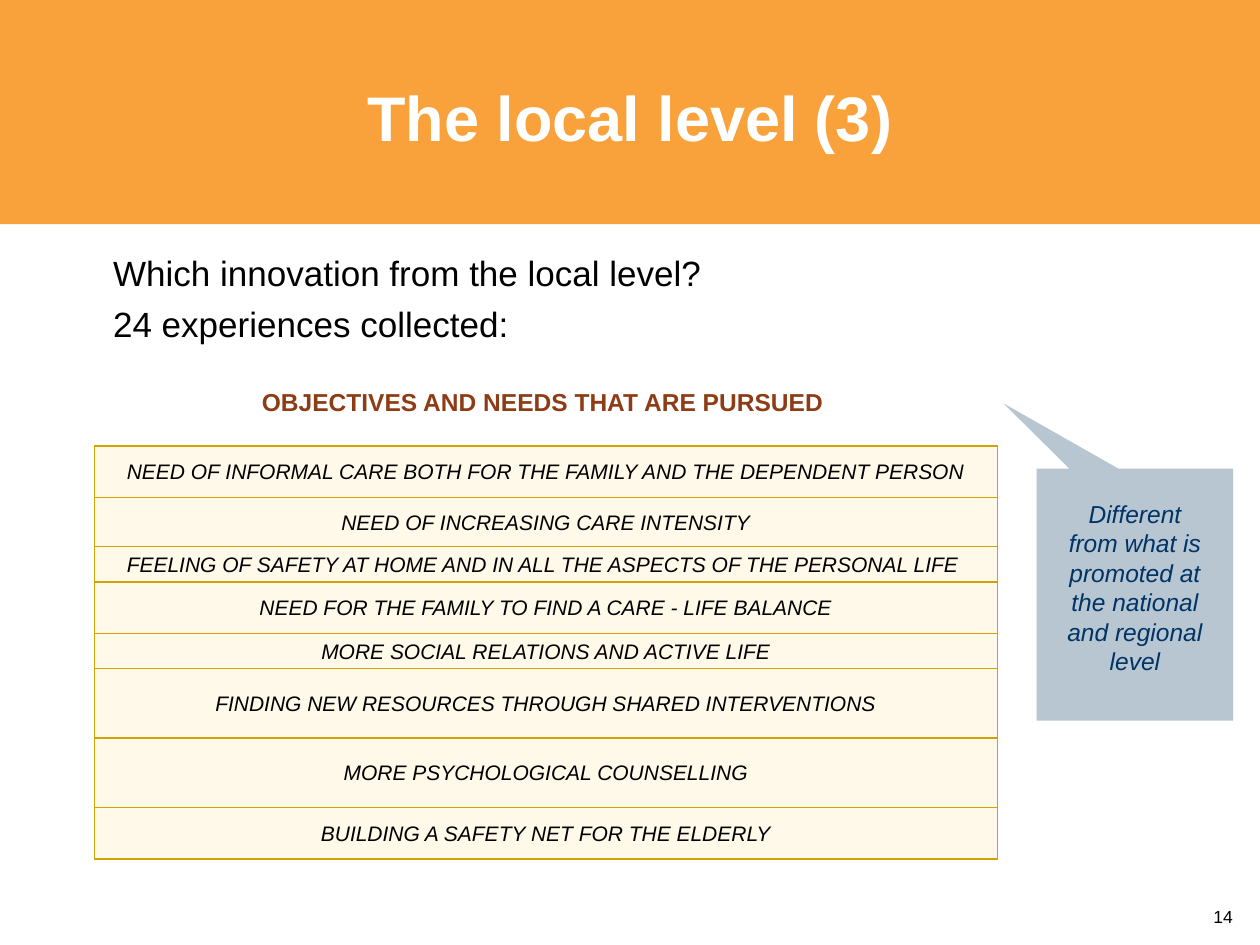
import pptx
import pptx.util
import pptx.dml.color
import pptx.enum.shapes
import pptx.enum.text
import pptx.oxml
import pptx.oxml.ns

Cm = pptx.util.Cm
Pt = pptx.util.Pt
ALIGN = pptx.enum.text.PP_ALIGN
ANCHOR = pptx.enum.text.MSO_ANCHOR
SHAPE = pptx.enum.shapes.MSO_SHAPE

TITLE = {"size": Pt(36), "bold": True, "color": "FFFFFF"}
BODY = {"size": Pt(20), "color": "000000"}
HEADING = {"size": Pt(14), "bold": True, "color": "8D3C15"}
CELL = {"size": Pt(12), "italic": True, "color": "000000"}
CALLOUT = {"size": Pt(14), "italic": True, "color": "003366"}
NUMBER = {"size": Pt(10), "color": "000000"}

OBJECTIVES = [
    ("NEED OF INFORMAL CARE BOTH FOR THE FAMILY AND THE DEPENDENT PERSON", 1.04),
    ("NEED OF INCREASING CARE INTENSITY", 0.99),
    ("FEELING OF SAFETY AT HOME AND IN ALL THE ASPECTS OF THE PERSONAL LIFE ", 0.71),
    ("NEED FOR THE FAMILY TO FIND A CARE - LIFE BALANCE", 1.04),
    ("MORE SOCIAL RELATIONS AND ACTIVE LIFE", 0.71),
    ("FINDING NEW RESOURCES THROUGH SHARED INTERVENTIONS", 1.4),
    ("MORE PSYCHOLOGICAL COUNSELLING", 1.4),
    ("BUILDING A SAFETY NET FOR THE ELDERLY", 1.04),
]


def set_color(color_format, value):
    color_format.rgb = pptx.dml.color.RGBColor.from_string(value)


def fill_solid(target, value):
    target.fill.solid()
    set_color(target.fill.fore_color, value)


def set_attributes(target, values):
    for name, value in values.items():
        setattr(target, name, value)


def write_text(frame, lines, style, alignment, gap=0):
    for index, line in enumerate(lines):
        paragraph = frame.add_paragraph() if index else frame.paragraphs[0]
        paragraph.text = line
        paragraph.alignment = alignment
        if index:
            paragraph.space_before = Pt(gap)
        font = paragraph.font
        font.name = "Arial"
        for name, value in style.items():
            if name == "color":
                set_color(font.color, value)
            else:
                setattr(font, name, value)


def add_plain_shape(slide, kind, box, color):
    shape = slide.shapes.add_shape(kind, *map(Cm, box))
    shape.shadow.inherit = False
    fill_solid(shape, color)
    shape.line.fill.background()
    return shape


def add_text(slide, box, lines, style, alignment=ALIGN.LEFT, gap=0):
    frame = slide.shapes.add_textbox(*map(Cm, box)).text_frame
    frame.word_wrap = True
    write_text(frame, lines, style, alignment, gap)


def add_header(slide, box, text):
    left, top, width, height = box
    band = add_plain_shape(slide, SHAPE.RECTANGLE, box, "F9A13A")
    title = slide.shapes.title
    title.element.addprevious(band.element)
    set_attributes(title, {
        "left": Cm(left + 1.27), "top": Cm(top + 0.76),
        "width": Cm(width - 2.54), "height": Cm(height - 1.34),
    })
    title.text_frame.vertical_anchor = ANCHOR.MIDDLE
    write_text(title.text_frame, [text], TITLE, ALIGN.CENTER)


def set_borders(cell, color, width):
    properties = cell._tc.get_or_add_tcPr()
    for index, side in enumerate(("lnL", "lnR", "lnT", "lnB")):
        line = pptx.oxml.parse_xml(
            f'<a:{side} {pptx.oxml.ns.nsdecls("a")} w="{Pt(width)}"><a:solidFill>'
            f'<a:srgbClr val="{color}"/></a:solidFill></a:{side}>'
        )
        properties.insert(index, line)


def add_objectives(slide, box):
    left, top, width, height = box
    add_text(slide, (left + 2.69, top - 1.32, 12.7, 0.86),
             ["OBJECTIVES AND NEEDS THAT ARE PURSUED"], HEADING, ALIGN.CENTER)
    table = slide.shapes.add_table(len(OBJECTIVES), 1, *map(Cm, box)).table
    set_attributes(table, {"first_row": False, "horz_banding": False})
    for index, (objective, row_height) in enumerate(OBJECTIVES):
        table.rows[index].height = Cm(row_height)
        cell = table.cell(index, 0)
        set_attributes(cell, {
            "margin_left": Cm(0.03), "margin_right": Cm(0.03),
            "margin_top": Cm(0.03), "margin_bottom": 0,
            "vertical_anchor": ANCHOR.MIDDLE,
        })
        fill_solid(cell, "FEF9E9")
        set_borders(cell, "D2A306", 1)
        write_text(cell.text_frame, [objective], CELL, ALIGN.CENTER)


def add_callout(slide, box, text):
    shape = add_plain_shape(slide, SHAPE.RECTANGULAR_CALLOUT, box, "B7C6D1")
    shape.adjustments[0] = -0.67
    shape.adjustments[1] = -0.76
    frame = shape.text_frame
    set_attributes(frame, {
        "margin_left": Cm(0.5), "margin_right": Cm(0.5),
        "margin_top": Cm(0.2), "margin_bottom": Cm(0.5),
        "vertical_anchor": ANCHOR.MIDDLE, "word_wrap": True,
    })
    write_text(frame, [text], CALLOUT, ALIGN.CENTER)


def main():
    presentation = pptx.Presentation()
    presentation.slide_width = Cm(25.4)
    presentation.slide_height = Cm(19.05)
    slide = presentation.slides.add_slide(presentation.slide_layouts[5])
    add_header(slide, (0, 0, 25.4, 4.52), "The local level (3)")
    add_text(slide, (2.03, 4.95, 22.86, 2.2),
             ["Which innovation from the local level?", "24 experiences collected:"],
             BODY, gap=4.8)
    add_objectives(slide, (1.9, 8.99, 18.21, 8.33))
    add_callout(slide, (20.9, 9.45, 3.96, 5.08),
                "Different from what is promoted at the national and regional level")
    add_text(slide, (21.44, 18.14, 3.66, 0.61), ["14"], NUMBER, ALIGN.RIGHT)
    presentation.save("out.pptx")


if __name__ == "__main__":
    main()
